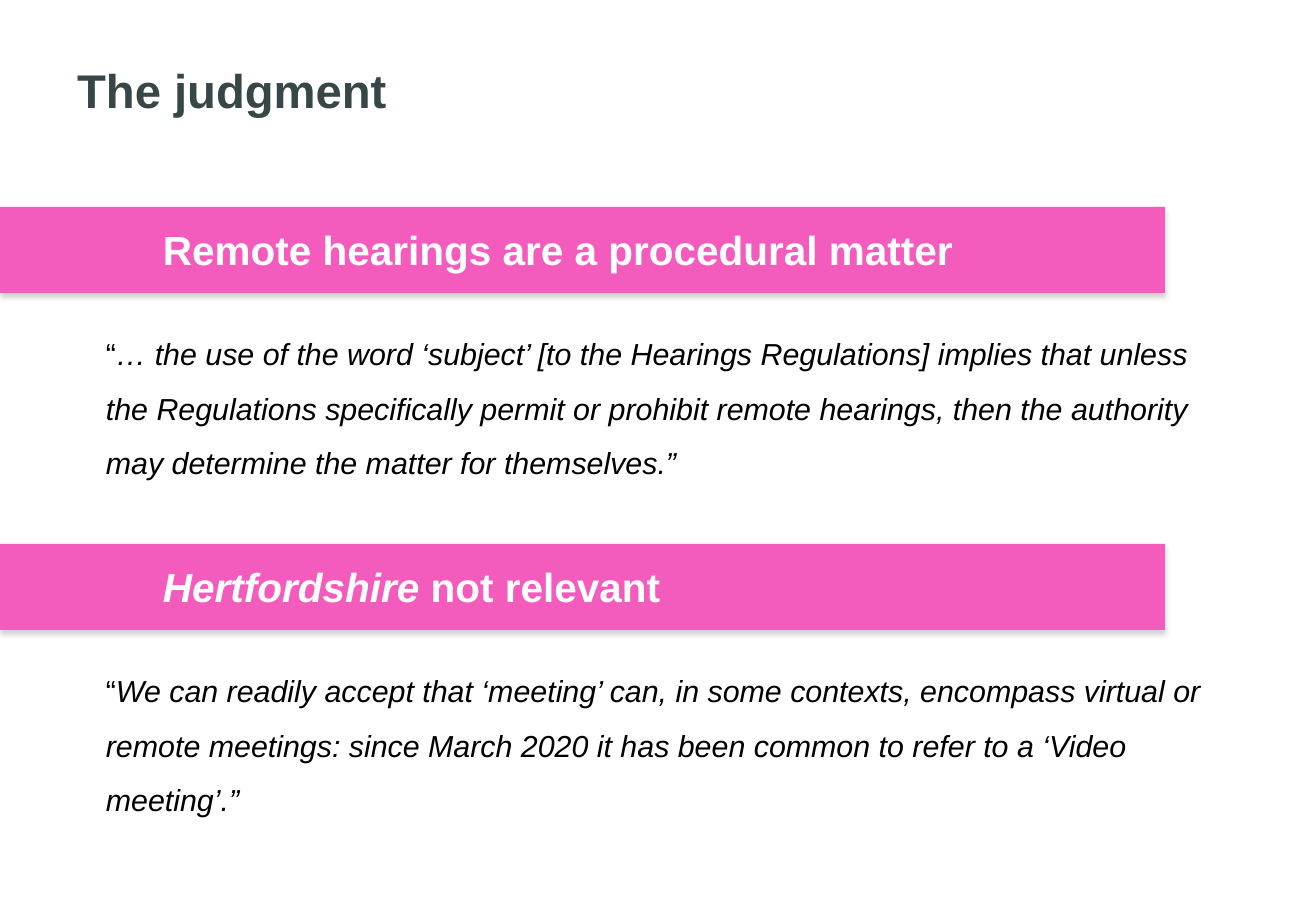
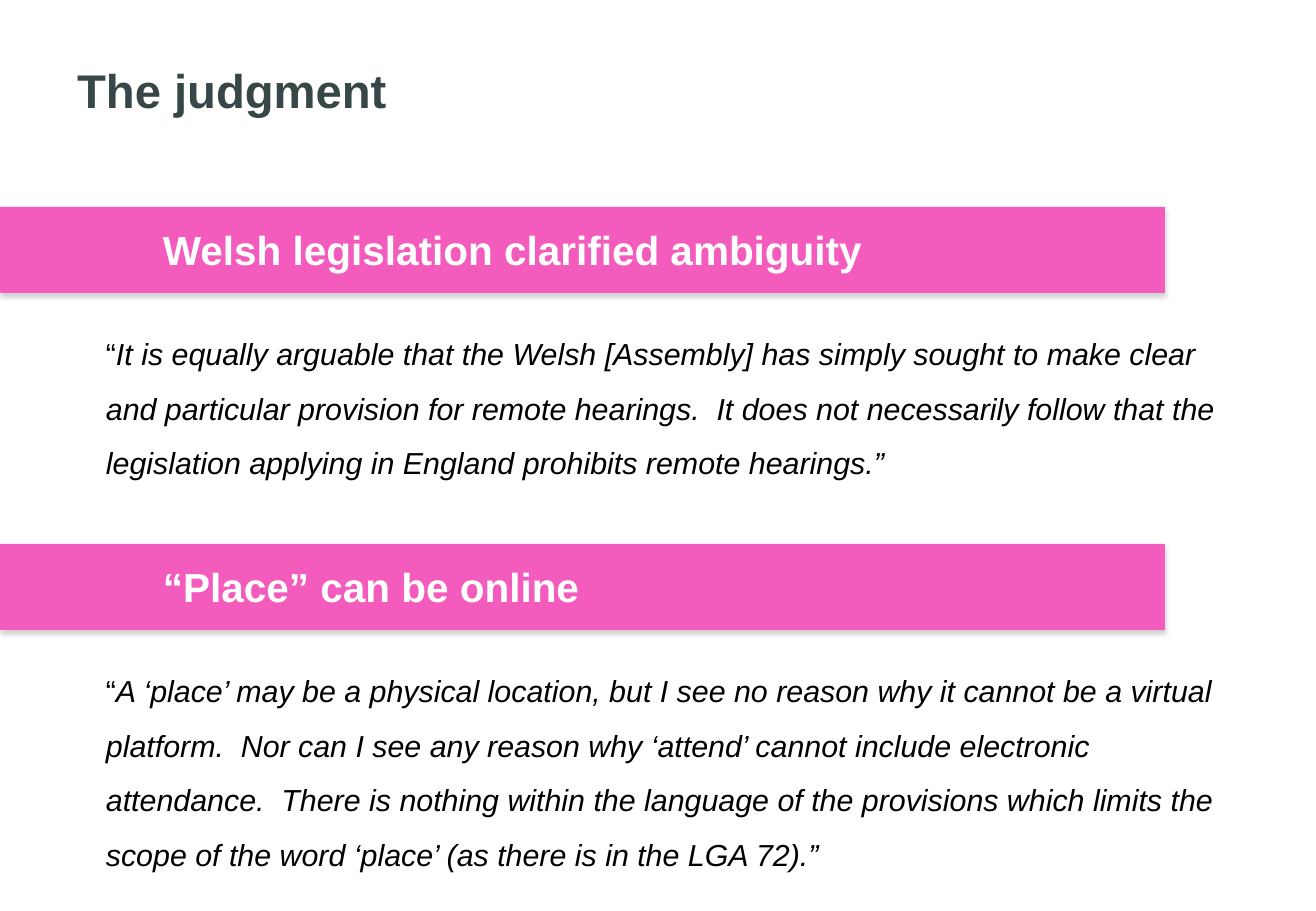
from lxml.etree import SubElement
from pptx import Presentation
from pptx.dml.color import RGBColor
from pptx.enum.shapes import MSO_SHAPE as SHAPE
from pptx.enum.text import MSO_ANCHOR as ANCHOR, MSO_AUTO_SIZE as AUTO, PP_ALIGN as ALIGN
from pptx.oxml.ns import qn
from pptx.util import Pt

SCALE = 7526
SLATE = RGBColor(0x37, 0x46, 0x46)
PINK = RGBColor(0xF3, 0x5B, 0xBD)
WHITE = RGBColor(0xFF, 0xFF, 0xFF)
BLACK = RGBColor(0x00, 0x00, 0x00)
FONT = "Arial"
SECTION_TOP, SECTION_STEP = 207, 337
LINE = 55

SLIDES = [
    ("The judgment", [
        ([("Remote hearings are a procedural matter", False)],
         "… the use of the word ‘subject’ [to the Hearings Regulations] implies that unless "
         "the Regulations specifically permit or prohibit remote hearings, then the authority "
         "may determine the matter for themselves.”", 3),
        ([("Hertfordshire", True), (" not relevant", False)],
         "We can readily accept that ‘meeting’ can, in some contexts, encompass virtual or "
         "remote meetings: since March 2020 it has been common to refer to a ‘Video "
         "meeting’.”", 3),
    ]),
    ("The judgment", [
        ([("Welsh legislation clarified ambiguity", False)],
         "It is equally arguable that the Welsh [Assembly] has simply sought to make clear "
         "and particular provision for remote hearings.  It does not necessarily follow that "
         "the legislation applying in England prohibits remote hearings.”", 3),
        ([("“Place” can be online", False)],
         "A ‘place’ may be a physical location, but I see no reason why it cannot be a virtual "
         "platform.  Nor can I see any reason why ‘attend’ cannot include electronic "
         "attendance.  There is nothing within the language of the provisions which limits "
         "the scope of the word ‘place’ (as there is in the LGA 72).”", 4),
    ]),
]


def px(*lengths):
    return [n * SCALE for n in lengths]


def write(tf, runs, size, color, bold=False):
    tf.word_wrap = True
    p = tf.paragraphs[0]
    p.alignment = ALIGN.LEFT
    p.font.name, p.font.size, p.font.bold = FONT, Pt(size), bold
    p.font.color.rgb = color
    for text, italic in runs:
        r = p.add_run()
        r.text = text
        if italic:
            r.font.italic = True
    return p


def add_rect(shapes, box, fill):
    s = shapes.add_shape(SHAPE.RECTANGLE, *px(*box))
    s.fill.solid()
    s.fill.fore_color.rgb = fill
    s.line.fill.background()
    s.shadow.inherit = False
    return s


def add_drop_shadow(s):
    effects = s._element.spPr.find(qn("a:effectLst"))
    shadow = SubElement(effects, qn("a:outerShdw"), blurRad=str(Pt(3.1)), dist=str(Pt(1.8)),
                        dir="5400000", algn="t", rotWithShape="0")
    color = SubElement(shadow, qn("a:srgbClr"), val="808080")
    SubElement(color, qn("a:alpha"), val="35000")


def add_title(slide, text):
    s = slide.shapes.title
    s.left, s.top, s.width, s.height = px(65, 29, 1086, 101)
    tf = s.text_frame
    tf.vertical_anchor = ANCHOR.BOTTOM
    tf.margin_bottom = px(12)[0]
    write(tf, [(text, False)], 28, SLATE, bold=True)


def add_band(slide, top, heading):
    group = slide.shapes.add_group_shape()
    add_drop_shadow(add_rect(group.shapes, (0, top, 1165, 86), PINK))
    s = group.shapes.add_textbox(*px(151, top + 12, 948, 61))
    write(s.text_frame, heading, 24, WHITE, bold=True)
    s.text_frame.auto_size = AUTO.SHAPE_TO_FIT_TEXT


def add_quote(slide, top, quote, lines):
    s = add_rect(slide.shapes, (94, top, 1148, lines * LINE + 6), WHITE)
    tf = s.text_frame
    tf.vertical_anchor = ANCHOR.TOP
    p = write(tf, [("“", False), (quote, True)], 18, BLACK)
    p.line_spacing = 1.5
    tf.auto_size = AUTO.SHAPE_TO_FIT_TEXT


def add_section(slide, top, heading, quote, lines):
    add_band(slide, top, heading)
    add_quote(slide, top + 104, quote, lines)


def main():
    prs = Presentation()
    prs.slide_width, prs.slide_height = px(1316, 911)
    for title, sections in SLIDES:
        slide = prs.slides.add_slide(prs.slide_layouts[5])
        add_title(slide, title)
        for i, section in enumerate(sections):
            add_section(slide, SECTION_TOP + i * SECTION_STEP, *section)
    prs.save("out.pptx")


if __name__ == "__main__":
    main()
